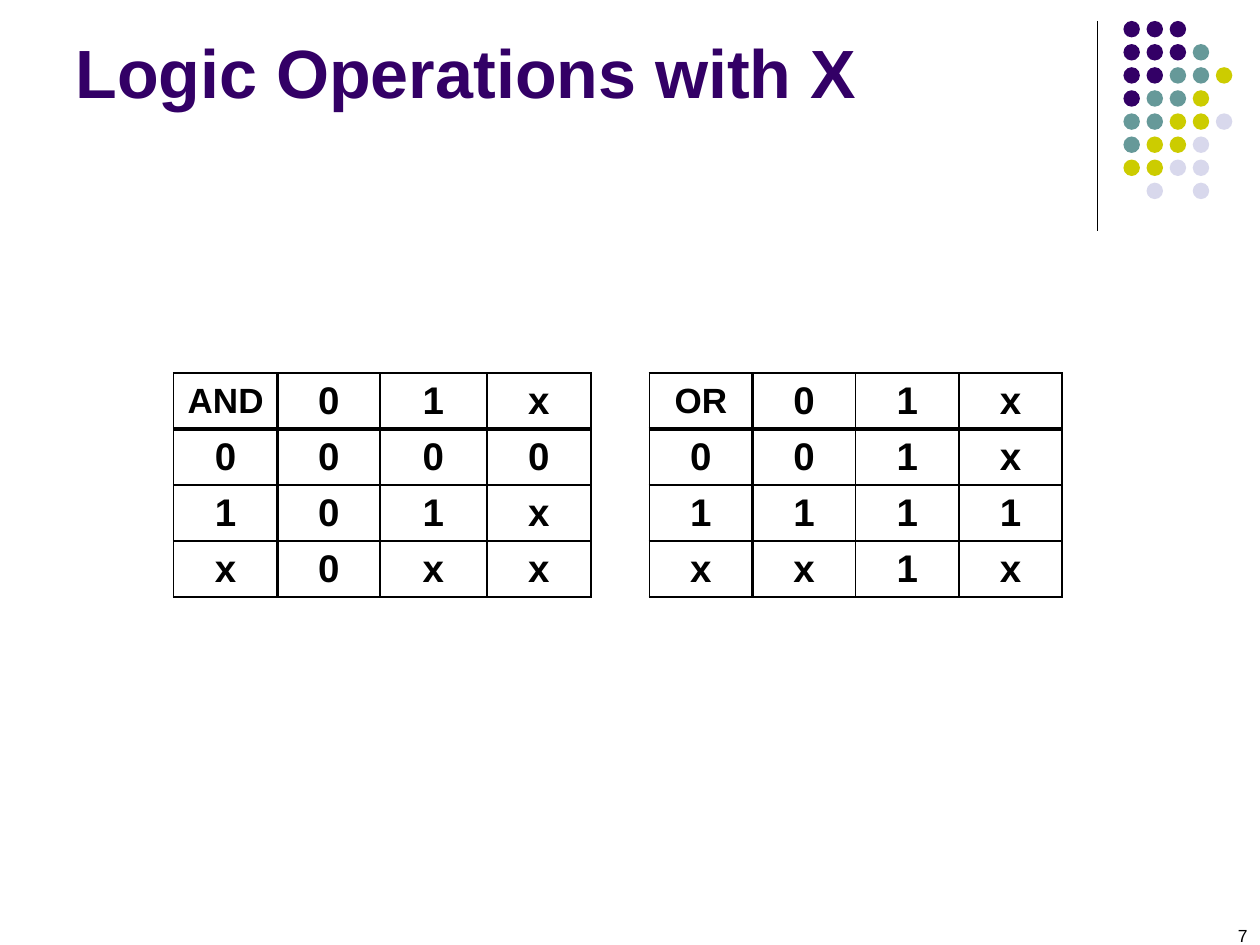
from lxml import etree
from pptx import Presentation
from pptx.dml.color import RGBColor
from pptx.enum.shapes import MSO_CONNECTOR, MSO_SHAPE
from pptx.enum.text import MSO_ANCHOR, MSO_AUTO_SIZE, PP_ALIGN
from pptx.oxml.ns import qn
from pptx.util import Pt

COLORS = {
    "ink": "000000",
    "purple": "330066",
    "teal": "669999",
    "olive": "CCCC00",
    "lilac": "D8D8EC",
}
DOT_COLORS = {"P": "purple", "T": "teal", "O": "olive", "L": "lilac"}
DOT_ROWS = ["PPP", "PPPT", "PPTTO", "PTTO", "TTOOL", "TOOL", "OOLL", " L L"]
AND_ROWS = ["AND 0 1 x", "0 0 0 0", "1 0 1 x", "x 0 x x"]
OR_ROWS = ["OR 0 1 x", "0 0 1 x", "1 1 1 1", "x x 1 x"]
THIN, THICK = 1, 2.25
LEFT, RIGHT, CENTER = PP_ALIGN.LEFT, PP_ALIGN.RIGHT, PP_ALIGN.CENTER
TOP, MIDDLE = MSO_ANCHOR.TOP, MSO_ANCHOR.MIDDLE
NO_FIT = MSO_AUTO_SIZE.NONE
OVAL, STRAIGHT = MSO_SHAPE.OVAL, MSO_CONNECTOR.STRAIGHT


def rgb(name):
    """Return the named colour."""
    return RGBColor.from_string(COLORS[name])


def apply(target, values):
    """Set each attribute of target from a dict."""
    for attribute, value in values.items():
        setattr(target, attribute, value)


def write(frame, text, size, color, align, bold):
    """Write one formatted paragraph into a text frame."""
    paragraph = frame.paragraphs[0]
    paragraph.alignment = align
    run = paragraph.add_run()
    run.text = text
    apply(run.font, {"name": "Arial", "size": Pt(size), "bold": bold})
    run.font.color.rgb = rgb(color)


def add_title(slide, left, top, width, height):
    """Place and format the slide title."""
    title = slide.shapes.title
    apply(title, {"left": Pt(left), "top": Pt(top),
                  "width": Pt(width), "height": Pt(height)})
    apply(title.text_frame, {"word_wrap": True, "auto_size": NO_FIT,
                             "vertical_anchor": TOP, "margin_top": Pt(8)})
    write(title.text_frame, "Logic Operations with X", 39, "purple", LEFT, True)


def add_rule(slide, x, top, bottom):
    """Draw the vertical rule beside the dots."""
    rule = slide.shapes.add_connector(STRAIGHT, Pt(x), Pt(top), Pt(x), Pt(bottom))
    rule.line.width = Pt(0.75)
    rule.line.color.rgb = rgb("ink")
    etree.SubElement(rule.element.spPr, qn("a:effectLst"))


def add_dots(slide, left, top, pitch, size):
    """Draw the corner pattern of coloured dots."""
    dots = slide.shapes.add_group_shape()
    for row, codes in enumerate(DOT_ROWS):
        for column, code in enumerate(codes):
            if code in DOT_COLORS:
                dot = dots.shapes.add_shape(
                    OVAL, Pt(left + column * pitch), Pt(top + row * pitch),
                    Pt(size), Pt(size))
                dot.shadow.inherit = False
                dot.fill.solid()
                dot.fill.fore_color.rgb = rgb(DOT_COLORS[code])
                dot.line.fill.background()


def add_borders(cell, widths):
    """Give a cell borders from a dict of side to width."""
    properties = cell._tc.get_or_add_tcPr()
    for side, width in widths.items():
        border = etree.SubElement(properties, qn(f"a:ln{side}"), w=str(Pt(width)))
        fill = etree.SubElement(border, qn("a:solidFill"))
        etree.SubElement(fill, qn("a:srgbClr"), val=COLORS["ink"])


def add_truth_table(slide, left, top, column_widths, row_height, rows):
    """Draw a truth table with thick lines after its header row and column."""
    frame = slide.shapes.add_table(
        len(rows), len(column_widths), Pt(left), Pt(top),
        Pt(sum(column_widths)), Pt(row_height * len(rows)))
    table = frame.table
    apply(table, {"first_row": False, "horz_banding": False})
    for column, width in zip(table.columns, column_widths):
        column.width = Pt(width)
    for r, line in enumerate(rows):
        table.rows[r].height = Pt(row_height)
        for c, text in enumerate(line.split()):
            cell = table.cell(r, c)
            apply(cell, {"vertical_anchor": MIDDLE,
                         "margin_top": Pt(2), "margin_bottom": Pt(2)})
            add_borders(cell, {"L": THICK if c == 1 else THIN,
                               "R": THICK if c == 0 else THIN,
                               "T": THICK if r == 1 else THIN,
                               "B": THICK if r == 0 else THIN})
            cell.fill.background()
            size = 20 if r == c == 0 else 22
            write(cell.text_frame, text, size, "ink", CENTER, True)


def add_slide_number(slide, left, top, width, height):
    """Place the slide number at the bottom right."""
    number = slide.shapes.add_textbox(Pt(left), Pt(top), Pt(width), Pt(height))
    number.text_frame.word_wrap = True
    write(number.text_frame, "7", 10, "ink", RIGHT, False)


def main():
    """Build and save the slide."""
    deck = Presentation()
    apply(deck, {"slide_width": Pt(720), "slide_height": Pt(540)})
    slide = deck.slides.add_slide(deck.slide_layouts[5])
    add_rule(slide, 627, 12, 132)
    add_dots(slide, 642, 12, 13.2, 9.4)
    add_slide_number(slide, 552, 525, 168, 15)
    add_title(slide, 36, 9.4, 594, 102)
    add_truth_table(slide, 99.2, 213.2, [59.5, 58.5, 61, 59.5], 32, AND_ROWS)
    add_truth_table(slide, 371, 213.2, [59] * 4, 32, OR_ROWS)
    deck.save("out.pptx")


if __name__ == "__main__":
    main()
